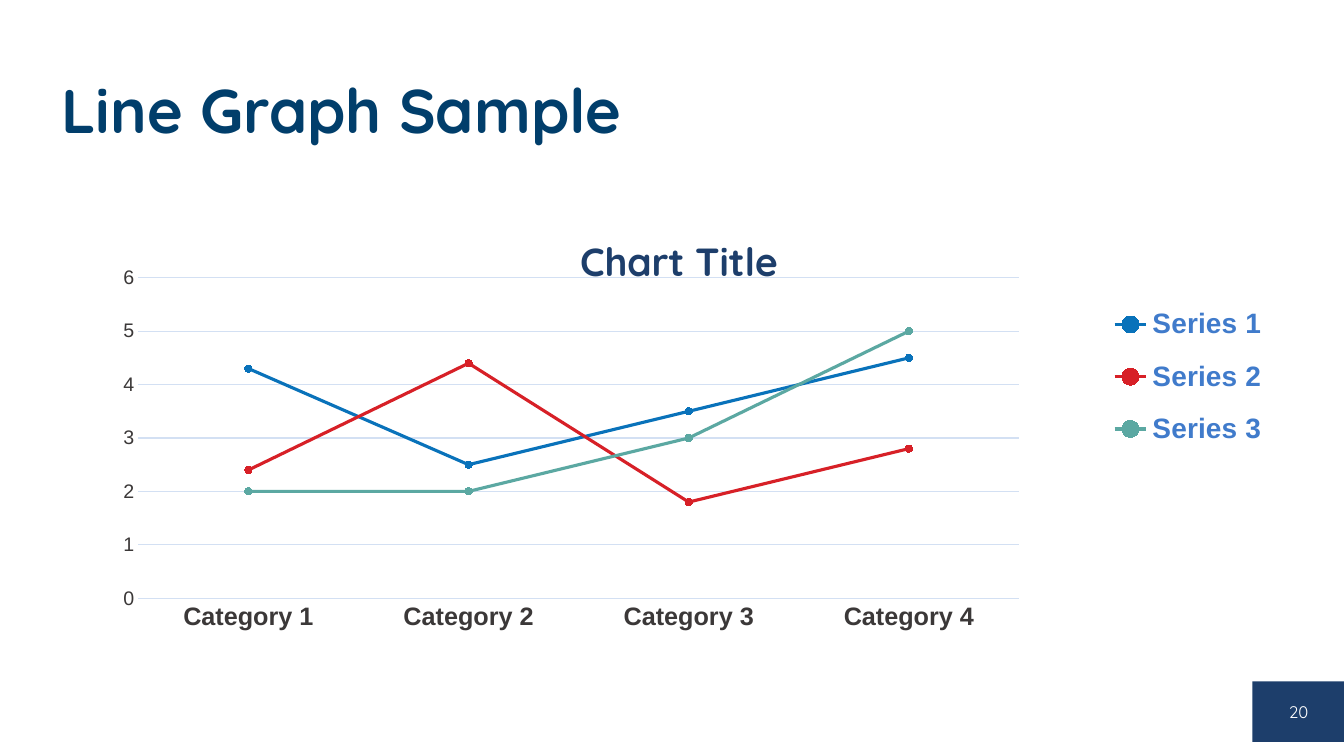
from lxml import etree
from pptx import Presentation
from pptx.chart.data import CategoryChartData
from pptx.dml.color import RGBColor
from pptx.enum.chart import XL_CHART_TYPE, XL_LEGEND_POSITION, XL_MARKER_STYLE, XL_TICK_MARK
from pptx.enum.shapes import MSO_SHAPE
from pptx.enum.text import MSO_ANCHOR, PP_ALIGN
from pptx.oxml.ns import qn
from pptx.util import Inches, Pt

# Content
TITLE = "Line Graph Sample"
CHART_TITLE = "Chart Title"
PAGE_NUMBER = "20"
CATEGORIES = ["Category 1", "Category 2", "Category 3", "Category 4"]
SERIES = [
    ("Series 1", (4.3, 2.5, 3.5, 4.5), "0972BA"),
    ("Series 2", (2.4, 4.4, 1.8, 2.8), "D72027"),
    ("Series 3", (2, 2, 3, 5), "5BA8A2"),
]
NAVY, PALE, GRAY = "1D3E6B", "D3E0F3", "3B3838"
LEFT, WIDTH = 0.51, 12.32


def color(value):
    return RGBColor.from_string(value)


def style(font, name, size, value, bold=False):
    font.name, font.size, font.bold = name, Pt(size), bold
    font.color.rgb = color(value)


def style_line(line, value, width):
    line.color.rgb = color(value)
    line.width = Pt(width)


def place(element, index, x, y, size=None, inner=False):
    """Give a chart part a fixed place, in fractions of the chart."""
    for old in element.findall(qn("c:layout")):
        element.remove(old)
    layout = etree.Element(qn("c:layout"))
    manual = etree.SubElement(layout, qn("c:manualLayout"))
    settings = [("layoutTarget", "inner")] if inner else []
    settings += [("xMode", "edge"), ("yMode", "edge"), ("x", x), ("y", y)]
    if size:
        settings += zip(("w", "h"), size)
    for tag, value in settings:
        etree.SubElement(manual, qn(f"c:{tag}")).set("val", str(value))
    element.insert(index, layout)


deck = Presentation()
deck.slide_width, deck.slide_height = Inches(13.33), Inches(7.5)
page = deck.slides.add_slide(deck.slide_layouts[6])

# Slide title
title_box = page.shapes.add_textbox(Inches(LEFT), Inches(0.4), Inches(WIDTH), Inches(1.45))
frame = title_box.text_frame
frame.word_wrap = True
frame.vertical_anchor = MSO_ANCHOR.MIDDLE
frame.text = TITLE
frame.paragraphs[0].line_spacing = 0.9
style(frame.paragraphs[0].runs[0].font, "Quicksand", 44, "013E6B", True)

# Page number
number_box = page.shapes.add_shape(
    MSO_SHAPE.RECTANGLE, Inches(12.42), Inches(6.76), Inches(0.92), Inches(0.6))
number_box.shadow.inherit = False
number_box.fill.solid()
number_box.fill.fore_color.rgb = color(NAVY)
number_box.line.fill.background()
frame = number_box.text_frame
frame.vertical_anchor = MSO_ANCHOR.MIDDLE
frame.text = PAGE_NUMBER
frame.paragraphs[0].alignment = PP_ALIGN.CENTER
style(frame.paragraphs[0].runs[0].font, "Quicksand", 12, "FFFFFF")

# Chart and its series
data = CategoryChartData()
data.categories = CATEGORIES
for name, values, _ in SERIES:
    data.add_series(name, values)
chart = page.shapes.add_chart(
    XL_CHART_TYPE.LINE_MARKERS, Inches(LEFT), Inches(2), Inches(WIDTH), Inches(4.76), data).chart
style(chart.font, "Lato", 10, NAVY)
plot = chart.plots[0]
plot.vary_by_categories = False
for series, (_, _, value) in zip(plot.series, SERIES):
    series.smooth = False
    style_line(series.format.line, value, 2.25)
    marker = series.marker
    marker.style, marker.size = XL_MARKER_STYLE.CIRCLE, 5
    marker.format.fill.solid()
    marker.format.fill.fore_color.rgb = color(value)
    style_line(marker.format.line, value, 0.75)

# Axes
for axis, size, bold in ((chart.category_axis, 18, True), (chart.value_axis, 14, False)):
    axis.major_tick_mark = axis.minor_tick_mark = XL_TICK_MARK.NONE
    style(axis.tick_labels.font, "Arial", size, GRAY, bold)
style_line(chart.category_axis.format.line, PALE, 0.75)
value_axis = chart.value_axis
value_axis.minimum_scale, value_axis.maximum_scale, value_axis.major_unit = 0, 6, 1
value_axis.format.line.fill.background()
style_line(value_axis.major_gridlines.format.line, PALE, 0.75)

# Chart title and legend
chart.has_title = True
frame = chart.chart_title.text_frame
frame.text = CHART_TITLE
style(frame.paragraphs[0].runs[0].font, "Quicksand", 28, NAVY, True)
chart.has_legend = True
legend = chart.legend
legend.position = XL_LEGEND_POSITION.RIGHT
legend.include_in_layout = False
style(legend.font, "Arial", 20, "407BCB", True)

# Places inside the chart
place(chart.chart_title._element, 1, 0.42, 0.05)
place(legend._element, 1, 0.85, 0.18, (0.13, 0.37))
plot_area = chart._chartSpace.find(qn("c:chart")).find(qn("c:plotArea"))
place(plot_area, 0, 0.07, 0.159, (0.709, 0.668), inner=True)

deck.save("out.pptx")
